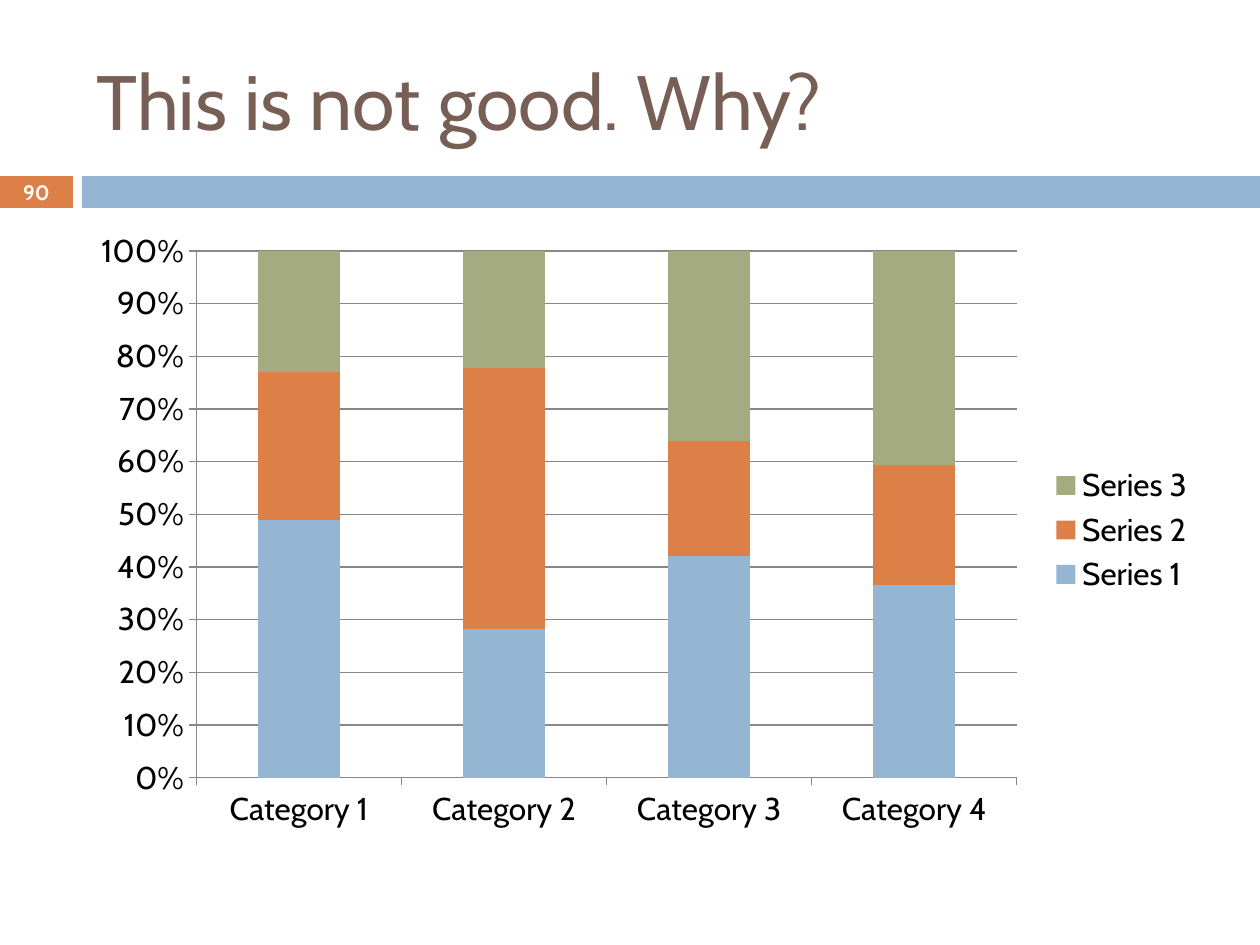
from lxml.etree import SubElement
from pptx import Presentation
from pptx.chart.data import CategoryChartData as ChartData
from pptx.dml.color import RGBColor as RGB
from pptx.enum.chart import XL_CHART_TYPE as Kind, XL_LEGEND_POSITION as Spot
from pptx.enum.chart import XL_TICK_MARK as Tick
from pptx.enum.shapes import MSO_SHAPE as Shape
from pptx.enum.text import MSO_ANCHOR as Anchor, MSO_AUTO_SIZE as Fit, PP_ALIGN as Align
from pptx.oxml.ns import qn
from pptx.util import Pt

PX = 914400 / 126
FONT = "Cabin"
BLUE, ORANGE, GREEN = "94B6D2", "DD8047", "A5AB81"
BROWN, GRAY, BLACK, WHITE = "775F55", "878787", "000000", "FFFFFF"

CATS = [f"Category {n}" for n in range(1, 5)]
SERIES = [
    ("Series 1", (49, 28, 42, 37), BLUE),
    ("Series 2", (28, 49, 22, 23), ORANGE),
    ("Series 3", (23, 22, 36, 41), GREEN),
]


def px(*nums):
    return [round(n * PX) for n in nums]


def paint(fmt, color):
    fmt.solid()
    fmt.fore_color.rgb = RGB.from_string(color)


def style(font, size, color, bold=False):
    font.name, font.size, font.bold = FONT, Pt(size), bold
    font.color.rgb = RGB.from_string(color)


def write(frame, text, size, color, align, bold=False):
    frame.word_wrap = True
    frame.auto_size = Fit.NONE
    frame.vertical_anchor = Anchor.MIDDLE
    para = frame.paragraphs[0]
    para.alignment = align
    run = para.add_run()
    run.text = text
    style(run.font, size, color, bold)


def add_title(slide, box, text):
    title = slide.shapes.title
    title.left, title.top, title.width, title.height = px(*box)
    write(title.text_frame, text, 44, BROWN, Align.LEFT)


def add_band(slide, box, number):
    """Number tab, a narrow gap, then the long bar."""
    x, y, w, h = box
    tab, gap = 73, 9
    rest = tab + gap
    for left, wide, color in ((x, tab, ORANGE), (x + rest, w - rest, BLUE)):
        bar = slide.shapes.add_shape(Shape.RECTANGLE, *px(left, y, wide, h))
        bar.shadow.inherit = False
        paint(bar.fill, color)
        bar.line.fill.background()
    # Slide number
    label = slide.shapes.add_textbox(*px(x, y - 1, tab, h + 2))
    frame = label.text_frame
    frame.margin_top = frame.margin_bottom = 0
    write(frame, number, 12, WHITE, Align.CENTER, True)


def place_plot(chart, **parts):
    """Fix the inner plot area, in shares of the chart box."""
    area = chart.element.find(".//" + qn("c:plotArea"))
    layout = area.find(qn("c:layout"))
    if layout is None:
        layout = SubElement(area, qn("c:layout"))
        area.insert(0, layout)
    manual = SubElement(layout, qn("c:manualLayout"))
    rules = {"layoutTarget": "inner", "xMode": "edge", "yMode": "edge", **parts}
    for name, val in rules.items():
        SubElement(manual, qn("c:" + name)).set("val", str(val))


def draw_line(fmt):
    paint(fmt.line.fill, GRAY)
    fmt.line.width = Pt(0.75)


def add_columns(slide, box):
    data = ChartData()
    data.categories = CATS
    for name, vals, _ in SERIES:
        data.add_series(name, vals)
    chart = slide.shapes.add_chart(Kind.COLUMN_STACKED_100, *px(*box), data).chart
    chart.has_title = False
    style(chart.font, 18, BLACK)
    place_plot(chart, x=0.1, y=0.05, w=0.73, h=0.85)

    # Columns
    plot = chart.plots[0]
    plot.vary_by_categories = False
    plot.gap_width, plot.overlap = 150, 100
    for ser, (_, _, color) in zip(plot.series, SERIES):
        paint(ser.format.fill, color)

    # Axes and grid
    for axis in (chart.category_axis, chart.value_axis):
        axis.major_tick_mark = Tick.OUTSIDE
        axis.minor_tick_mark = Tick.NONE
        draw_line(axis.format)
    scale = chart.value_axis
    scale.minimum_scale, scale.maximum_scale, scale.major_unit = 0, 1, 0.1
    scale.tick_labels.number_format = "0%"
    scale.tick_labels.number_format_is_linked = False
    scale.has_major_gridlines = True
    draw_line(scale.major_gridlines.format)

    # Legend
    chart.has_legend = True
    chart.legend.position = Spot.RIGHT
    chart.legend.include_in_layout = False


def main():
    deck = Presentation()
    deck.slide_width, deck.slide_height = px(1260, 945)
    slide = deck.slides.add_slide(deck.slide_layouts[5])
    add_band(slide, (0, 176, 1260, 32), "90")
    add_title(slide, (84, 32, 1124, 136), "This is not good. Why?")
    add_columns(slide, (84, 220, 1124, 620))
    deck.save("out.pptx")


if __name__ == "__main__":
    main()
